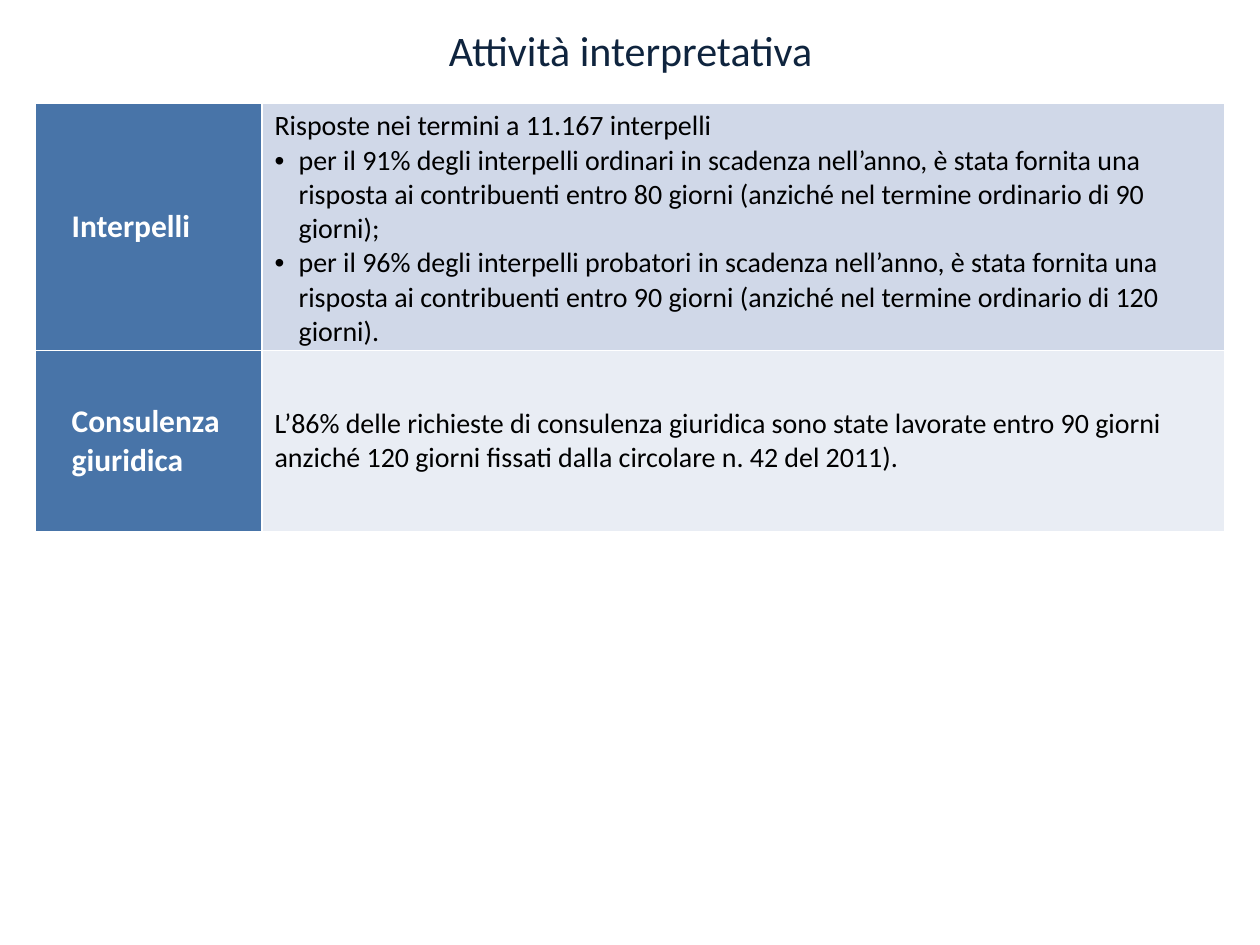
from dataclasses import dataclass

from lxml.etree import SubElement
from pptx import Presentation
from pptx.dml.color import RGBColor
from pptx.enum.text import MSO_ANCHOR as Anchor, MSO_AUTO_SIZE as AutoSize, PP_ALIGN as Align
from pptx.oxml import parse_xml
from pptx.oxml.ns import nsdecls, qn
from pptx.util import Emu, Pt

PX = 914400 / 126
FONT = "Calibri"
NAVY = RGBColor(0x0F, 0x24, 0x3E)
BLUE = RGBColor(0x48, 0x74, 0xA8)
BAND_DARK = RGBColor(0xD0, 0xD8, 0xE8)
BAND_LIGHT = RGBColor(0xE9, 0xED, 0xF4)
WHITE = RGBColor(0xFF, 0xFF, 0xFF)
BLACK = RGBColor(0x00, 0x00, 0x00)
INDENT = 24
COLUMNS = (227, 963)


@dataclass
class Para:
    text: str
    bullet: bool = False


@dataclass
class Row:
    label: str
    body: list[Para]
    height: int
    fill: RGBColor
    label_left: int = INDENT
    label_first: int = 0


ROWS = [
    Row("Interpelli", [
        Para("Risposte nei termini a 11.167 interpelli"),
        Para("per il 91% degli interpelli ordinari in scadenza nell’anno, è stata fornita una "
             "risposta ai contribuenti entro 80 giorni (anziché nel termine ordinario di 90 "
             "giorni);", bullet=True),
        Para("per il 96% degli interpelli probatori in scadenza nell’anno, è stata fornita una "
             "risposta ai contribuenti entro 90 giorni (anziché nel termine ordinario di 120 "
             "giorni).", bullet=True),
    ], 208, BAND_DARK, label_left=0, label_first=INDENT),
    Row("Consulenza giuridica", [
        Para("L’86% delle richieste di consulenza giuridica sono state lavorate entro 90 giorni "
             "anziché 120 giorni fissati dalla circolare n. 42 del 2011)."),
    ], 181, BAND_LIGHT),
]


def px(n: int) -> Emu:
    return Emu(round(n * PX))


def write(p, text: str, *, size: int, color: RGBColor, bold: bool = False,
          align=Align.LEFT, left: int = 0, first: int = 0, bullet: bool = False) -> None:
    p.alignment = align
    pPr = p._p.get_or_add_pPr()
    pPr.set("marL", str(px(left)))
    pPr.set("indent", str(px(first)))
    if bullet:
        SubElement(pPr, qn("a:buFont")).set("typeface", "Arial")
        SubElement(pPr, qn("a:buChar")).set("char", "•")
    r = p.add_run()
    r.text = text
    font = r.font
    font.name, font.size, font.bold = FONT, Pt(size), bold
    font.color.rgb = color


def style_cell(cell, fill: RGBColor) -> None:
    cell.vertical_anchor = Anchor.MIDDLE
    cell.fill.solid()
    cell.fill.fore_color.rgb = fill
    tcPr = cell._tc.get_or_add_tcPr()
    for i, side in enumerate("LRTB"):
        tcPr.insert(i, parse_xml(
            f'<a:ln{side} {nsdecls("a")} w="{Pt(1)}"><a:solidFill>'
            f'<a:srgbClr val="{WHITE}"/></a:solidFill></a:ln{side}>'))


def add_title(s, text: str) -> None:
    tf = s.shapes.add_textbox(px(149), px(18), px(963), px(63)).text_frame
    tf.word_wrap = True
    tf.auto_size = AutoSize.SHAPE_TO_FIT_TEXT
    write(tf.paragraphs[0], text, size=24, color=NAVY, align=Align.CENTER)


def add_results(s, rows: list[Row]) -> None:
    frame = s.shapes.add_table(len(rows), len(COLUMNS), px(35), px(103),
                               px(sum(COLUMNS)), px(sum(row.height for row in rows)))
    table = frame.table
    table.first_row = table.horz_banding = False
    for column, width in zip(table.columns, COLUMNS):
        column.width = px(width)
    for i, row in enumerate(rows):
        table.rows[i].height = px(row.height)
        label, body = table.cell(i, 0), table.cell(i, 1)
        style_cell(label, BLUE)
        style_cell(body, row.fill)
        write(label.text_frame.paragraphs[0], row.label, size=18, color=WHITE, bold=True,
              left=row.label_left, first=row.label_first)
        tf = body.text_frame
        for j, para in enumerate(row.body):
            p = tf.add_paragraph() if j else tf.paragraphs[0]
            hang = INDENT if para.bullet else 0
            write(p, para.text, size=16, color=BLACK, left=hang, first=-hang,
                  bullet=para.bullet)


def main() -> None:
    prs = Presentation()
    prs.slide_width, prs.slide_height = px(1260), px(945)
    s = prs.slides.add_slide(prs.slide_layouts[6])
    add_title(s, "Attività interpretativa")
    add_results(s, ROWS)
    prs.save("out.pptx")


if __name__ == "__main__":
    main()
